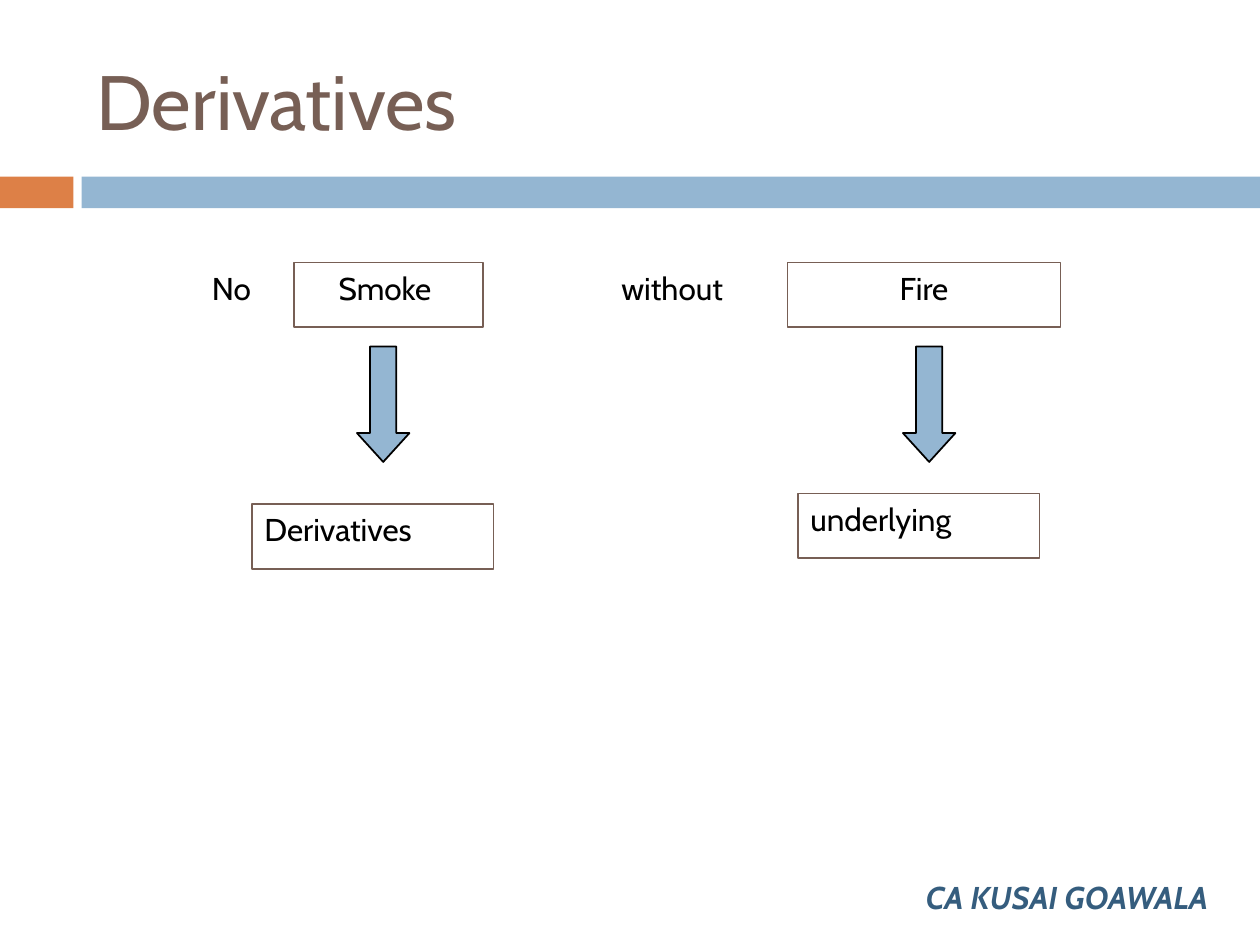
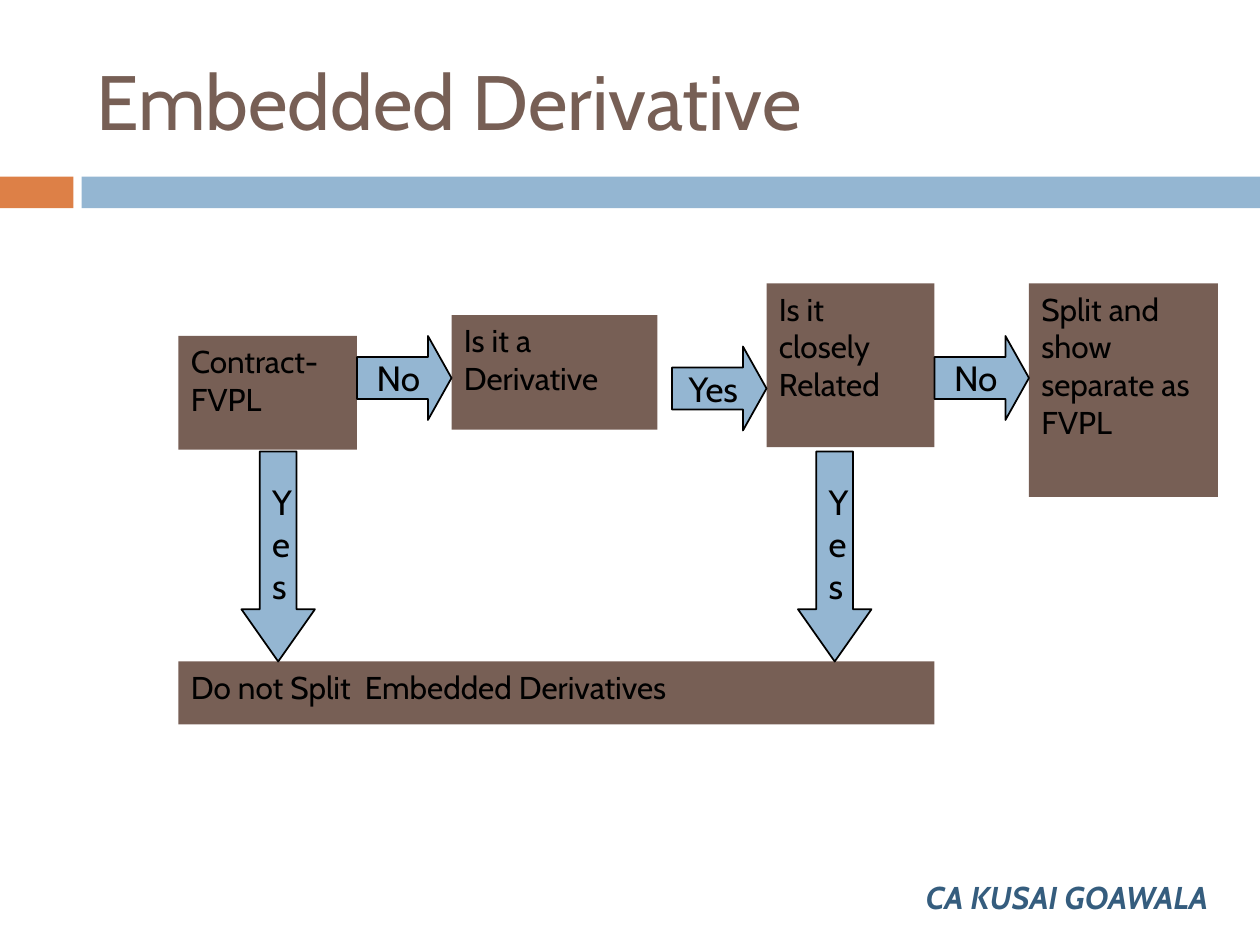
from pptx import Presentation
from pptx.dml.color import RGBColor
from pptx.enum.shapes import MSO_SHAPE
from pptx.enum.text import MSO_ANCHOR, PP_ALIGN
from pptx.util import Pt

COLORS = {
    "brown": "775F55",
    "blue": "94B6D2",
    "orange": "DD8047",
    "navy": "355D7E",
    "black": "000000",
}
FONT = "Cabin"
BODY_SIZE = 18
ARROW_SIZE = 20


class Deck:
    def __init__(self):
        self.presentation = Presentation()
        self.presentation.slide_width = Pt(720)
        self.presentation.slide_height = Pt(540)
        self.slide = None

    def new_slide(self, title):
        """Start a slide with the shared bands, title and author line."""
        self.slide = self.presentation.slides.add_slide(
            self.presentation.slide_layouts[6])
        self.box(0, 101, 42, 18, fill="orange")
        self.box(46.6, 101, 673.4, 18, fill="blue")
        self.label(title, 48, 18, 642, 78, size=44, color="brown",
                   anchor=MSO_ANCHOR.MIDDLE)
        self.label("CA KUSAI GOAWALA", 522, 498, 186, 29, color="navy",
                   bold=True, italic=True)

    def set_text(self, shape, text, size=BODY_SIZE, color="black",
                 align=PP_ALIGN.LEFT, anchor=MSO_ANCHOR.TOP, wrap=True,
                 bold=False, italic=False):
        frame = shape.text_frame
        frame.word_wrap = wrap
        frame.vertical_anchor = anchor
        paragraph = frame.paragraphs[0]
        paragraph.alignment = align
        run = paragraph.add_run()
        run.text = text
        font = run.font
        font.name, font.size = FONT, Pt(size)
        font.bold, font.italic = bold, italic
        font.color.rgb = RGBColor.from_string(COLORS[color])

    def label(self, text, left, top, width, height, **style):
        holder = self.slide.shapes.add_textbox(
            Pt(left), Pt(top), Pt(width), Pt(height))
        self.set_text(holder, text, **style)

    def box(self, left, top, width, height, text=None, fill=None, line=None,
            kind=MSO_SHAPE.RECTANGLE, **style):
        shape = self.slide.shapes.add_shape(
            kind, Pt(left), Pt(top), Pt(width), Pt(height))
        shape.shadow.inherit = False
        if fill:
            shape.fill.solid()
            shape.fill.fore_color.rgb = RGBColor.from_string(COLORS[fill])
        else:
            shape.fill.background()
        if line:
            shape.line.color.rgb = RGBColor.from_string(COLORS[line])
            shape.line.width = Pt(1)
        else:
            shape.line.fill.background()
        if text:
            self.set_text(shape, text, **style)
        return shape

    def arrow(self, kind, left, top, width, height, head, text=None, wrap=True):
        """Block arrow; head is the head length relative to the short side."""
        shape = self.box(left, top, width, height, text, "blue", "black", kind,
                         size=ARROW_SIZE, align=PP_ALIGN.CENTER,
                         anchor=MSO_ANCHOR.MIDDLE, wrap=wrap)
        shape.adjustments[0] = 0.5
        shape.adjustments[1] = head


def derivatives_slide(deck):
    deck.new_slide("Derivatives")
    for text, left, width in (("Smoke ", 168, 108), ("Fire", 450, 156)):
        deck.box(left, 150, width, 37, text, line="brown",
                 align=PP_ALIGN.CENTER)
    for text, left, top in (("Derivatives", 144, 288), ("underlying", 456, 282)):
        deck.box(left, top, 138, 37, text, line="brown")
    for left in (204, 516):
        deck.arrow(MSO_SHAPE.DOWN_ARROW, left, 198, 30, 66, head=0.55)
    for text, left, width in (("No", 114, 48), ("without", 348, 90)):
        deck.label(text, left, 150, width, 36)


def embedded_slide(deck):
    deck.new_slide("Embedded Derivative")
    steps = (
        ("Contract- FVPL", 102, 192, 102, 65),
        ("Is it a Derivative", 258, 180, 117.6, 65.5),
        ("Is it closely Related", 438, 162, 96, 93.5),
        ("Split and show separate as FVPL", 588, 162, 108, 122),
        ("Do not Split  Embedded Derivatives", 102, 378, 432, 36),
    )
    for text, *place in steps:
        deck.box(*place, text, fill="brown")
    for answer, left, top in (("No", 204, 192), ("Yes", 384, 198),
                              ("No", 534, 192)):
        deck.arrow(MSO_SHAPE.RIGHT_ARROW, left, top, 54, 48, head=0.28,
                   text=answer, wrap=False)
    for left in (138, 456):
        deck.arrow(MSO_SHAPE.DOWN_ARROW, left, 258, 42, 120, head=0.71,
                   text="Yes")


def main():
    deck = Deck()
    derivatives_slide(deck)
    embedded_slide(deck)
    deck.presentation.save("out.pptx")


if __name__ == "__main__":
    main()
